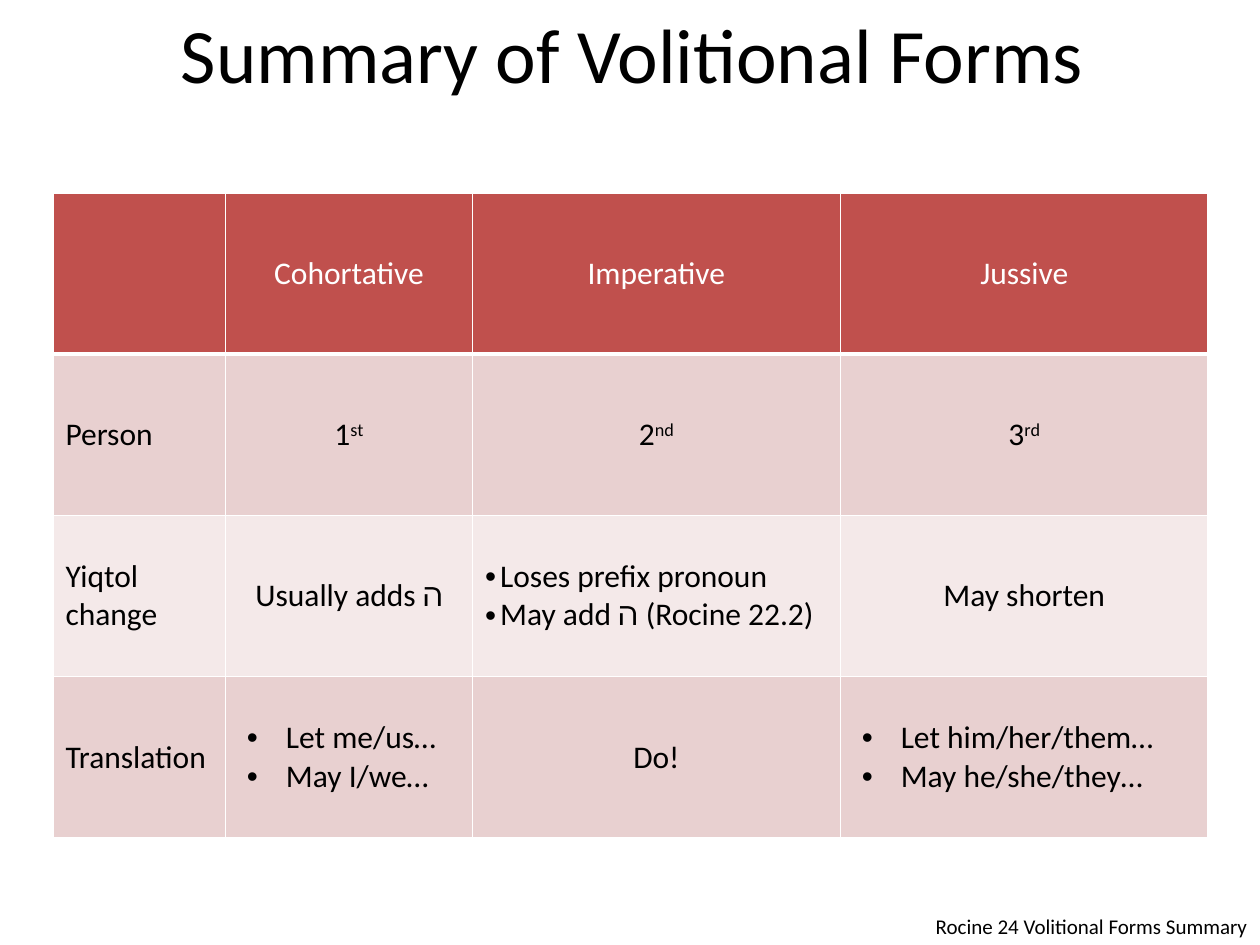
from dataclasses import dataclass

import pptx
import pptx.dml.color
import pptx.enum.text
import pptx.oxml.ns
import pptx.util
from lxml import etree

Inches = pptx.util.Inches
ALIGN = pptx.enum.text.PP_ALIGN
ANCHOR = pptx.enum.text.MSO_ANCHOR


@dataclass(frozen=True)
class Theme:
    font: str = "Calibri"
    text: str = "000000"
    light: str = "FFFFFF"
    header: str = "C0504D"
    bands: tuple = ("E8D0D0", "F4E9E9")
    title_size: int = 44
    table_size: int = 18
    footer_size: int = 12
    rule: int = 1
    header_rule: int = 3


THEME = Theme()
COLUMNS = (1.37, 1.96, 2.92, 2.92)
ROW_HEIGHT = 1.28
TIGHT = (0.12, -0.12)
WIDE = (0.38, -0.31)
ROWS = (
    ("", "Cohortative", "Imperative", "Jussive"),
    ("Person", "1^st", "2^nd", "3^rd"),
    ("Yiqtol\nchange", "Usually adds ה",
     (TIGHT, "Loses prefix pronoun\nMay add ה (Rocine 22.2)"), "May shorten"),
    ("Translation", (WIDE, "Let me/us…\nMay I/we…"), "Do!",
     (WIDE, "Let him/her/them…\nMay he/she/they…")),
)


def rgb(value):
    return pptx.dml.color.RGBColor.from_string(value)


def add_child(parent, tag, **attrs):
    return etree.SubElement(parent, pptx.oxml.ns.qn(tag), attrs)


def add_run(p, text, size, color, baseline=0):
    r = p.add_run()
    r.text = text
    formats = {"name": THEME.font, "size": pptx.util.Pt(size)}
    for name, value in formats.items():
        setattr(r.font, name, value)
    r.font.color.rgb = rgb(color)
    if baseline:
        r._r.get_or_add_rPr().set("baseline", str(baseline))


def set_bullet(p, indent):
    pPr = p._p.get_or_add_pPr()
    for name, value in zip(("marL", "indent"), indent):
        pPr.set(name, str(Inches(value)))
    add_child(pPr, "a:buFont", typeface="Arial")
    add_child(pPr, "a:buChar", char="•")


def write_text(tf, text, size, color, align, indent=None):
    for i, line in enumerate(text.split("\n")):
        p = tf.add_paragraph() if i else tf.paragraphs[0]
        p.alignment = align
        if indent:
            set_bullet(p, indent)
        base, _, ordinal = line.partition("^")
        if base:
            add_run(p, base, size, color)
        if ordinal:
            add_run(p, ordinal, size, color, baseline=30000)


def add_text(s, text, box, size, align, anchor, wrap):
    tf = s.shapes.add_textbox(*map(Inches, box)).text_frame
    formats = {"word_wrap": wrap, "vertical_anchor": anchor}
    for name, value in formats.items():
        setattr(tf, name, value)
    write_text(tf, text, size, THEME.text, align)


def set_borders(cell, bottom):
    tcPr = cell._tc.get_or_add_tcPr()
    widths = {"L": THEME.rule, "R": THEME.rule, "T": THEME.rule, "B": bottom}
    for side, width in widths.items():
        ln = add_child(tcPr, f"a:ln{side}", w=str(pptx.util.Pt(width)))
        add_child(add_child(ln, "a:solidFill"), "a:srgbClr", val=THEME.light)


def fill_cell(cell, content, row, col):
    is_header = row == 0
    set_borders(cell, THEME.header_rule if is_header else THEME.rule)
    cell.fill.solid()
    cell.fill.fore_color.rgb = rgb(
        THEME.header if is_header else THEME.bands[(row - 1) % 2])
    cell.vertical_anchor = ANCHOR.MIDDLE
    indent, text = content if isinstance(content, tuple) else (None, content)
    align = ALIGN.LEFT if indent or col == 0 else ALIGN.CENTER
    color = THEME.light if is_header else THEME.text
    write_text(cell.text_frame, text, THEME.table_size, color, align, indent)


def add_forms_table(s, left, top):
    size = (sum(COLUMNS), ROW_HEIGHT * len(ROWS))
    table = s.shapes.add_table(len(ROWS), len(COLUMNS), Inches(left), Inches(top),
                               *map(Inches, size)).table
    for column, width in zip(table.columns, COLUMNS):
        column.width = Inches(width)
    for i, contents in enumerate(ROWS):
        table.rows[i].height = Inches(ROW_HEIGHT)
        for j, content in enumerate(contents):
            fill_cell(table.cell(i, j), content, i, j)


def main():
    prs = pptx.Presentation()
    prs.slide_width, prs.slide_height = Inches(10), Inches(7.5)
    s = prs.slides.add_slide(prs.slide_layouts[6])
    add_text(s, "Summary of Volitional Forms", (0.52, 0, 9, 0.83),
             THEME.title_size, ALIGN.CENTER, ANCHOR.MIDDLE, True)
    add_forms_table(s, 0.42, 1.53)
    add_text(s, "Rocine 24 Volitional Forms Summary", (7.29, 7.2, 2.71, 0.3),
             THEME.footer_size, ALIGN.RIGHT, ANCHOR.TOP, False)
    prs.save("out.pptx")


if __name__ == "__main__":
    main()
